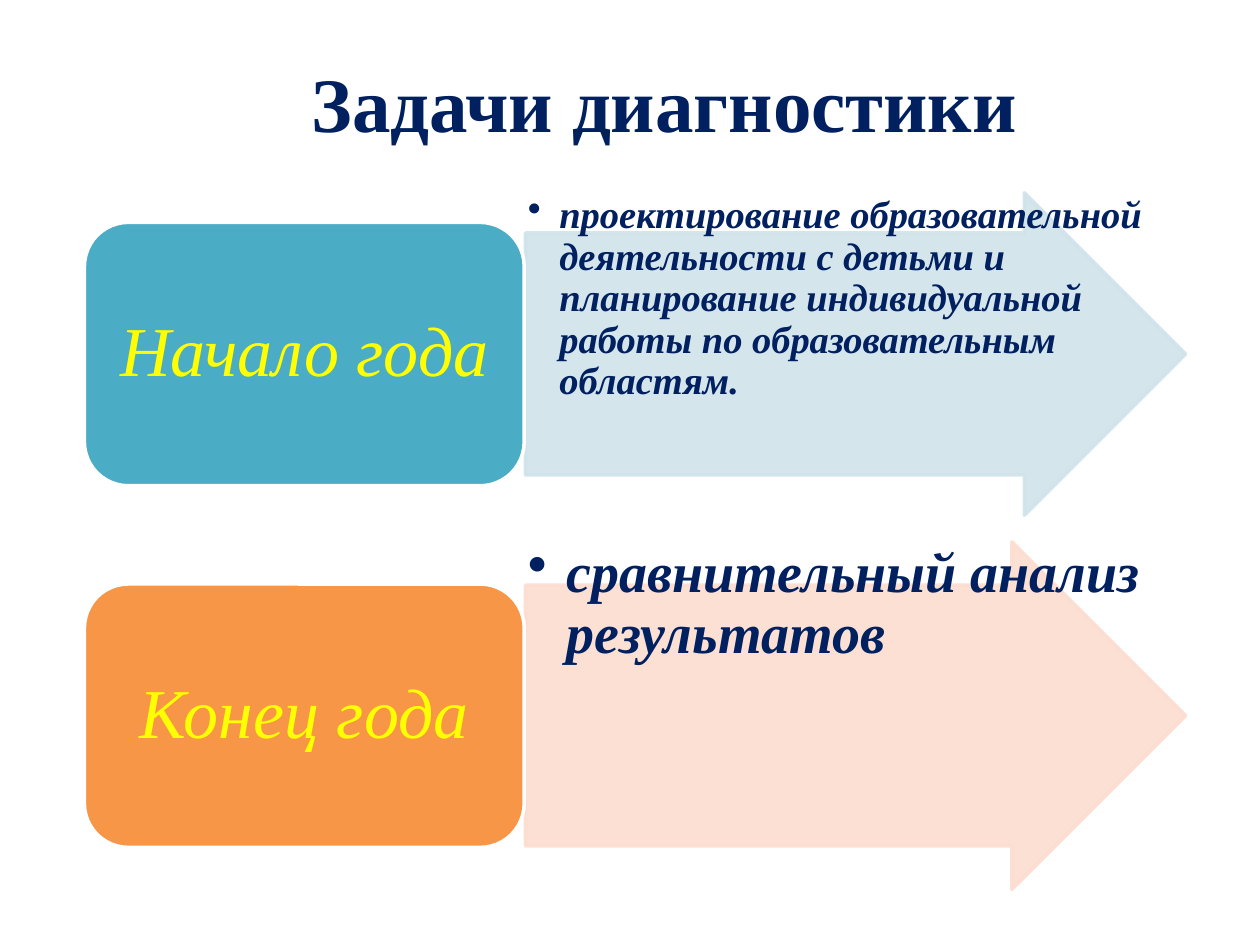
from dataclasses import dataclass

from lxml import etree
from pptx import Presentation
from pptx.dml.color import RGBColor
from pptx.enum.shapes import MSO_SHAPE
from pptx.enum.text import MSO_ANCHOR, PP_ALIGN
from pptx.oxml.ns import qn
from pptx.util import Inches, Pt

ARROW, ROUNDED = MSO_SHAPE.RIGHT_ARROW, MSO_SHAPE.ROUNDED_RECTANGLE
TOP, MIDDLE = MSO_ANCHOR.TOP, MSO_ANCHOR.MIDDLE
LEFT, CENTER = PP_ALIGN.LEFT, PP_ALIGN.CENTER
TITLE_ONLY = 5


@dataclass(frozen=True)
class Theme:
    """Colours, type sizes and line width of the slide."""
    font: str = "Times New Roman"
    navy: str = "002060"
    yellow: str = "FFFF00"
    white: str = "FFFFFF"
    teal: str = "4BACC6"
    pale_teal: str = "D0E3EA"
    orange: str = "F79646"
    pale_orange: str = "FCDDCF"
    title: int = 44
    period: int = 40
    long_task: int = 22
    short_task: int = 32
    outline: int = 2


THEME = Theme()


def write(holder, text, *, size, color, bold=False, italic=False, align=LEFT, anchor=TOP,
          insets=(0.1, 0.05), margin=0, hanging=0, bullet=None, spacing=1.0):
    """Fill the holder's text frame with one formatted paragraph."""
    frame = holder.text_frame
    frame.word_wrap = True
    frame.vertical_anchor = anchor
    frame.margin_left = frame.margin_right = Inches(insets[0])
    frame.margin_top = frame.margin_bottom = Inches(insets[1])
    paragraph = frame.paragraphs[0]
    properties = paragraph._p.get_or_add_pPr()
    properties.set("marL", str(Inches(margin)))
    properties.set("indent", str(Inches(-hanging)))
    if bullet:
        paragraph.level = 1
        etree.SubElement(properties, qn("a:buChar")).set("char", bullet)
    paragraph.alignment = align
    paragraph.line_spacing = spacing
    run = paragraph.add_run()
    run.text = text
    font = run.font
    font.name, font.size, font.bold, font.italic = THEME.font, Pt(size), bold, italic
    font.color.rgb = RGBColor.from_string(color)


def add_block(slide, kind, box, fill, line, opacity=100):
    """Add a preset shape with a fill and outline of the given opacity."""
    block = slide.shapes.add_shape(kind, *map(Inches, box))
    block.shadow.inherit = False
    block.fill.solid()
    block.fill.fore_color.rgb = RGBColor.from_string(fill)
    block.line.color.rgb = RGBColor.from_string(line)
    block.line.width = Pt(THEME.outline)
    if opacity < 100:
        for color in block._element.spPr.iter(qn("a:srgbClr")):
            etree.SubElement(color, qn("a:alpha")).set("val", str(opacity * 1000))
    return block


def place_title(slide, box, text):
    """Move the title placeholder to its box and write the heading."""
    title = slide.shapes.title
    title.left, title.top, title.width, title.height = map(Inches, box)
    write(title, text, size=THEME.title, color=THEME.navy, bold=True,
          align=CENTER, anchor=MIDDLE, margin=0.39)


def place_task(slide, box, task, size, hanging, pale):
    """Draw the pale arrow with its bulleted task."""
    arrow = add_block(slide, ARROW, box, pale, pale, opacity=90)
    arrow.adjustments[0], arrow.adjustments[1] = 0.75, 0.5
    write(slide.shapes.add_textbox(*map(Inches, box)), task, size=size, color=THEME.navy,
          bold=True, italic=True, insets=(0.02, 0.02), margin=hanging, hanging=hanging,
          bullet="•", spacing=0.9)


def place_period(slide, box, period, fill):
    """Draw the rounded block that names the period."""
    block = add_block(slide, ROUNDED, box, fill, THEME.white)
    write(block, period, size=THEME.period, color=THEME.yellow, italic=True, align=CENTER,
          anchor=MIDDLE, insets=(0.07, 0.02), spacing=0.9)


def place_stage(slide, box, period, fill, task, size, hanging, pale):
    """Place a period block, centred in height, beside its task arrow."""
    left, top, width, height = box
    block_width, block_height = 3.49, 2.09
    arrow_left = block_width + 0.01
    place_task(slide, (left + arrow_left, top, width - arrow_left, height),
               task, size, hanging, pale)
    place_period(slide, (left, top + (height - block_height) / 2, block_width, block_height),
                 period, fill)


def main():
    """Build and save the slide."""
    deck = Presentation()
    deck.slide_width, deck.slide_height = Inches(10), Inches(7.5)
    slide = deck.slides.add_slide(deck.slide_layouts[TITLE_ONLY])
    place_title(slide, (0.51, 0.39, 9.14, 0.84), "Задачи диагностики")
    place_stage(slide, (0.67, 1.53, 8.74, 2.56), "Начало года", THEME.teal,
                "проектирование образовательной деятельности с детьми и планирование "
                "индивидуальной работы по образовательным областям.",
                THEME.long_task, 0.25, THEME.pale_teal)
    place_stage(slide, (0.67, 4.3, 8.74, 2.76), "Конец года", THEME.orange,
                "сравнительный анализ результатов",
                THEME.short_task, 0.31, THEME.pale_orange)
    deck.save("out.pptx")


if __name__ == "__main__":
    main()
